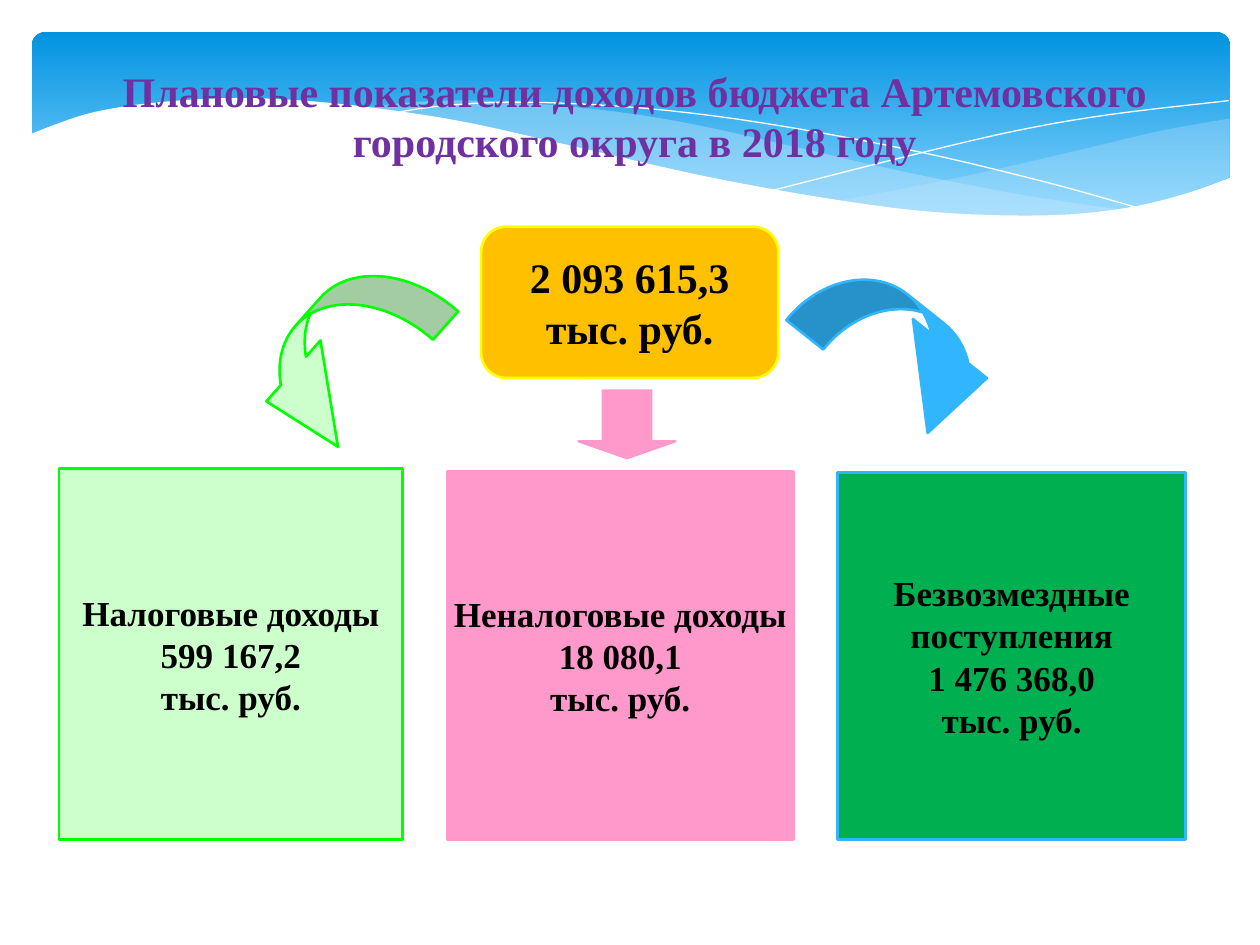
from lxml import etree
from pptx import Presentation, util as u
from pptx.dml.color import RGBColor
from pptx.enum import shapes, text
from pptx.oxml.ns import qn

THEME = {
    "font": "Times New Roman", "big": 24, "body": 20,
    "title": "7030A0", "ink": "000000", "white": "FFFFFF", "band": "C6E7FC",
    "sky": ("0293E0", "83D3FE"), "amber": "FFC000", "yellow": "FFFF00",
    "mint": "CCFFCC", "lime": "00FF00", "pink": "FF99CC",
    "green": "00B050", "blue": "31B6FD",
}
KIND = shapes.MSO_SHAPE

TITLE = "Плановые показатели доходов бюджета Артемовского городского округа в 2018 году"
TOTAL = ["2 093 615,3", "тыс. руб."]
CARDS = [
    (["Налоговые доходы 599 167,2", "тыс. руб."], 6.93, 7.47, 0.3, "mint", "lime"),
    (["Неналоговые доходы 18 080,1", "тыс. руб."], 6.99, 7.42, 0, "pink", "pink"),
    (["Безвозмездные поступления", "1 476 368,0", "тыс. руб."], 7.01, 7.39, 0.3, "green", "blue"),
]
CARD_LEFT, CARD_BOTTOM, CARD_GAP = 1.19, 16.92, 0.89
ARROWS = [
    (KIND.CURVED_DOWN_ARROW, (15.95, 6.17, 4.6, 1.93), 38.6, (0.493, 0.988, 0.834), "blue", "blue", 1.5),
    (KIND.CURVED_UP_ARROW, (4.67, 6.07, 4.47, 2.26), 131.6, (0.338, 0.727, 0.747), "mint", "lime", 1.5),
    (KIND.DOWN_ARROW, (11.66, 7.87, 1.96, 1.37), 0, (0.5, 0.25), "pink", "pink", 1.25),
]
BANDS = [
    ([[(24.79, 2.39), (23.39, 2.64), (21.87, 3), (19.79, 3.48), (17.93, 3.86), (16.79, 4.06)],
      [(16.79, 4.06), (18.24, 4.24), (19.53, 4.34), (20.93, 4.37), (22.15, 4.29),
       (23.39, 4.06), (24.79, 3.58)]], 29),
    ([[(22.68, 4.24), (20.5, 3.91), (17.93, 3.4), (15.98, 2.95), (13.74, 2.46),
       (11.81, 2.18), (9.65, 2.03), (8.33, 2.06), (7.26, 2.18)],
      [(7.26, 2.18), (9.19, 2.46), (11.4, 2.95), (13.46, 3.43), (15.7, 3.89),
       (17.65, 4.19), (19.33, 4.34), (21.03, 4.39), (22.68, 4.24)]], 40),
]
THREADS = [
    [(7.85, 2.29), (8.97, 2.13), (10.57, 2.06), (12.95, 2.18), (15.44, 2.49),
     (18.47, 3.05), (21.11, 3.68), (23.04, 4.22)],
    [(15.57, 3.84), (18.29, 3.15), (20.47, 2.64), (22.38, 2.31), (24.77, 2.03)],
]
COVER = [
    [(24.82, 3.58), (23.88, 3.91), (22.83, 4.17), (21.59, 4.32), (20.14, 4.34), (18.44, 4.24),
     (16.43, 3.96), (14.1, 3.53), (11.35, 2.9), (9.27, 2.44), (7.42, 2.16), (5.84, 2.01),
     (4.5, 1.98), (3.02, 2.08), (1.9, 2.26), (1.17, 2.49), (0.58, 2.72)],
    [(0.58, 5.69), (24.82, 5.69)],
]


def rgb(name):
    return RGBColor.from_string(THEME[name])


def paint(sp, fill=None, line=None, width=1.5):
    sp.shadow.inherit = False
    if fill:
        sp.fill.solid()
        sp.fill.fore_color.rgb = rgb(fill)
    else:
        sp.fill.background()
    if line:
        sp.line.color.rgb = rgb(line)
        sp.line.width = u.Pt(width)
    else:
        sp.line.fill.background()


def add_shape(slide, kind, box, adjustments=()):
    sp = slide.shapes.add_shape(kind, *map(u.Cm, box))
    for i, value in enumerate(adjustments):
        sp.adjustments[i] = value
    return sp


def write(sp, lines, size, color="ink", inset=(0.25, 0.13)):
    tf = sp.text_frame
    tf.word_wrap = True
    tf.vertical_anchor = text.MSO_ANCHOR.MIDDLE
    tf.margin_left = tf.margin_right = u.Cm(inset[0])
    tf.margin_top = tf.margin_bottom = u.Cm(inset[1])
    tf.text = "\n".join(lines)
    for p in tf.paragraphs:
        p.alignment = text.PP_ALIGN.CENTER
        p.font.name, p.font.size, p.font.bold = THEME["font"], u.Pt(THEME[size]), True
        p.font.color.rgb = rgb(color)


def smooth(points, steps=5):
    if len(points) < 3:
        return points
    padded = [points[0], *points, points[-1]]
    curve = [points[0]]
    for quad in zip(padded, padded[1:], padded[2:], padded[3:]):
        for t in (i / steps for i in range(1, steps + 1)):
            curve.append(tuple(
                b + t * (c - a) / 2 + t**2 * (2 * a - 5 * b + 4 * c - d) / 2
                + t**3 * (3 * b - a - 3 * c + d) / 2
                for a, b, c, d in zip(*quad)))
    return curve


def add_outline(slide, edges, close=True):
    points = [(u.Cm(x), u.Cm(y)) for edge in edges for x, y in smooth(edge)]
    builder = slide.shapes.build_freeform(*points[0])
    builder.add_line_segments(points[1:], close=close)
    return builder.convert_to_shape()


def add_waves(slide):
    sp = add_shape(slide, KIND.ROUNDED_RECTANGLE, (0.64, 0.64, 24.16, 3.96), [0.071])
    paint(sp)
    sp.fill.gradient()
    sp.fill.gradient_angle = 270
    for stop, color, position in zip(sp.fill.gradient_stops, THEME["sky"], (0, 0.9)):
        stop.color.rgb = RGBColor.from_string(color)
        stop.position = position
    for edges, opacity in BANDS:
        sp = add_outline(slide, edges)
        paint(sp, "band")
        color = sp._element.spPr.find(qn("a:solidFill")).find(qn("a:srgbClr"))
        etree.SubElement(color, qn("a:alpha"), val=str(opacity * 1000))
    for thread in THREADS:
        paint(add_outline(slide, [thread], close=False), line="white", width=0)
    paint(add_outline(slide, COVER), "white")


def main():
    """Build the planned budget revenue slide."""
    prs = Presentation()
    prs.slide_width, prs.slide_height = u.Cm(25.4), u.Cm(19.05)
    slide = prs.slides.add_slide(prs.slide_layouts[6])
    add_waves(slide)
    write(slide.shapes.add_textbox(*map(u.Cm, (0.69, 0.53, 24.21, 3.61))), [TITLE], "big", "title")

    sp = add_shape(slide, KIND.ROUNDED_RECTANGLE, (9.7, 4.57, 5.99, 3.05), [0.167])
    paint(sp, "amber", "yellow")
    write(sp, TOTAL, "big", inset=(0.36, 0.13))

    left = CARD_LEFT
    for lines, width, height, inset, fill, line in CARDS:
        sp = add_shape(slide, KIND.RECTANGLE, (left, CARD_BOTTOM - height, width, height))
        paint(sp, fill, line)
        write(sp, lines, "body", inset=(inset, 0))
        left += width + CARD_GAP

    for kind, box, rotation, adjustments, fill, line, weight in ARROWS:
        sp = add_shape(slide, kind, box, adjustments)
        sp.rotation = rotation
        paint(sp, fill, line, weight)
    prs.save("out.pptx")


if __name__ == "__main__":
    main()
